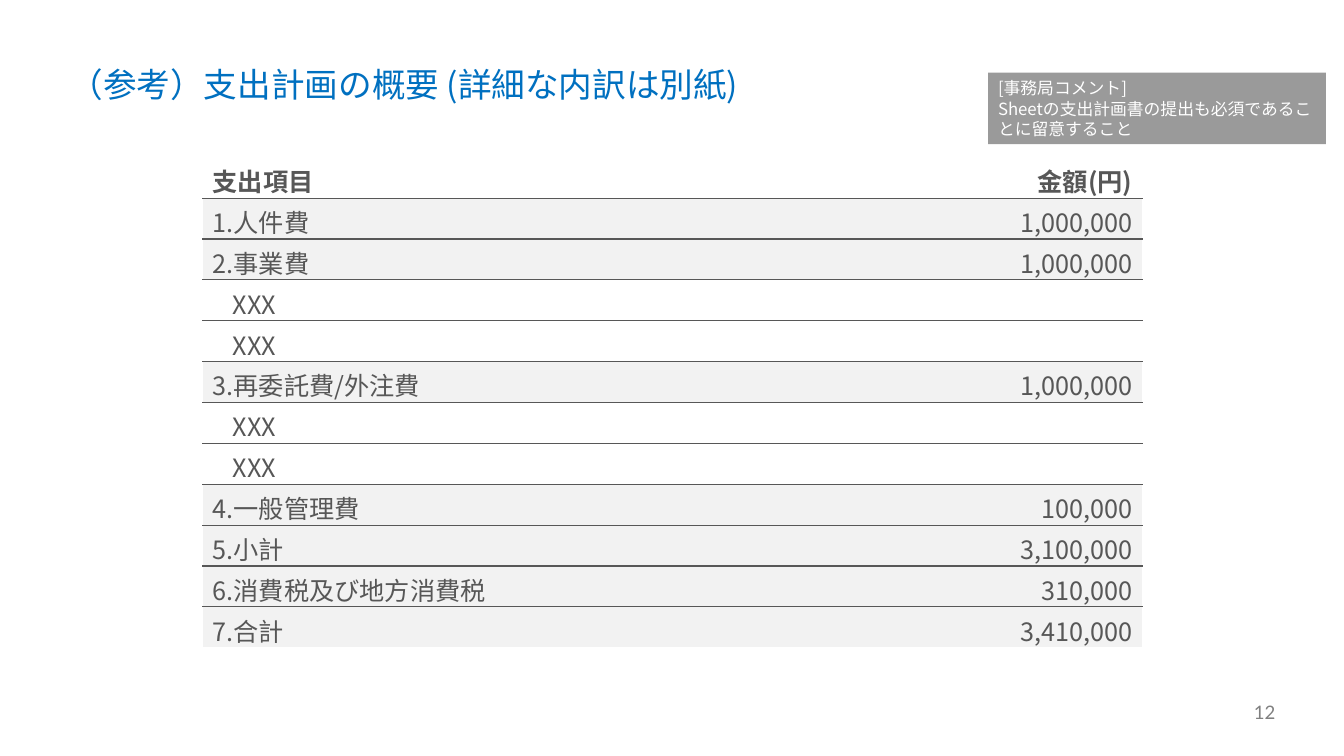
from dataclasses import dataclass

from lxml.etree import SubElement as Sub
from pptx import Presentation
from pptx.dml.color import RGBColor as RGB
from pptx.enum.shapes import MSO_SHAPE as Shape
from pptx.enum.text import MSO_ANCHOR as Anchor, PP_ALIGN as Align
from pptx.oxml.ns import qn
from pptx.util import Inches, Pt

HUES = {"blue": "0070C0", "text": "575757", "band": "F2F2F2",
        "note": "9A9A9A", "page": "808080", "white": "FFFFFF"}
SANS = "Noto Sans CJK JP"
PAD = ("margin_left", "margin_top", "margin_right", "margin_bottom")


@dataclass
class Style:
    size: float
    hue: str
    face: str = SANS
    bold: bool = False
    align: Align = Align.LEFT
    space: float = 1.0


@dataclass
class Label:
    box: tuple[float, float, float, float]
    text: str
    style: Style
    anchor: Anchor
    pads: tuple[float, float, float, float] = (0, 0, 0, 0)
    fill: str | None = None


@dataclass
class Item:
    name: str
    price: str = ""
    head: bool = False


LABELS = [
    Label((12.09, 6.95, 0.56, 0.22), "12",
          Style(13.3, "page", "Lato", align=Align.RIGHT), Anchor.BOTTOM),
    Label((0.69, 0.68, 11.96, 0.36), "（参考）支出計画の概要 (詳細な内訳は別紙)",
          Style(24, "blue", space=0.9), Anchor.MIDDLE),
    Label((9.8, 0.72, 3.35, 0.71),
          "[事務局コメント]\vSheetの支出計画書の提出も必須であることに留意すること",
          Style(12, "white"), Anchor.MIDDLE,
          (0.1, 0.05, 0.1, 0.05), "note"),
]
ITEMS = [
    Item("支出項目", "金額(円)", head=True),
    Item("1.人件費", "1,000,000"),
    Item("2.事業費", "1,000,000"),
    Item("XXX"),
    Item("XXX"),
    Item("3.再委託費/外注費", "1,000,000"),
    Item("XXX"),
    Item("XXX"),
    Item("4.一般管理費", "100,000"),
    Item("5.小計", "3,100,000"),
    Item("6.消費税及び地方消費税", "310,000"),
    Item("7.合計", "3,410,000"),
]


def tint(name: str) -> RGB:
    return RGB.from_string(HUES[name])


def write(frame, text: str, style: Style) -> None:
    frame.text = text
    para = frame.paragraphs[0]
    para.alignment = style.align
    para.line_spacing = style.space
    look = {"size": Pt(style.size), "bold": style.bold, "name": style.face}
    for run in para.runs:
        for key, value in look.items():
            setattr(run.font, key, value)
        run.font.color.rgb = tint(style.hue)
        Sub(run.font._element, qn("a:ea"), typeface=style.face)


def draw(slide, label: Label) -> None:
    box = [Inches(n) for n in label.box]
    if label.fill:
        shape = slide.shapes.add_shape(Shape.RECTANGLE, *box)
        shape.shadow.inherit = False
        shape.fill.solid()
        shape.fill.fore_color.rgb = tint(label.fill)
        shape.line.fill.background()
    else:
        shape = slide.shapes.add_textbox(*box)
    frame = shape.text_frame
    look = {"word_wrap": True, "vertical_anchor": label.anchor}
    look |= {side: Inches(n) for side, n in zip(PAD, label.pads)}
    for key, value in look.items():
        setattr(frame, key, value)
    write(frame, label.text, label.style)


def edge(cell, side: str, hue: str | None) -> None:
    line = Sub(cell._tc.get_or_add_tcPr(), qn(f"a:ln{side}"), w=str(Pt(1)))
    if hue:
        Sub(Sub(line, qn("a:solidFill")), qn("a:srgbClr"), val=HUES[hue])
    else:
        Sub(line, qn("a:noFill"))


def fill_cell(cell, item: Item, row: int, col: int) -> None:
    for side, value in zip(PAD, (0.1, 0.05, 0.1, 0)):
        setattr(cell, side, Inches(value))
    # Borders: white outside, grey between rows
    edge(cell, "L", None if col else "white")
    edge(cell, "R", "white" if col else None)
    edge(cell, "T", "text" if row else "white")
    edge(cell, "B", "text" if row < len(ITEMS) - 1 else "white")
    if item.price and not item.head:
        cell.fill.solid()
        cell.fill.fore_color.rgb = tint("band")
    else:
        cell.fill.background()
    align = Align.RIGHT if col else Align.LEFT
    text = item.price if col else item.name
    write(cell.text_frame, text, Style(18, "text", bold=item.head, align=align))
    if not item.price and not col:
        props = cell.text_frame.paragraphs[0]._p.get_or_add_pPr()
        props.set("marL", str(Inches(0.2)))
        props.set("indent", "0")


def build_table(slide) -> None:
    box = [Inches(n) for n in (2.01, 1.56, 9.32, 4.87)]
    table = slide.shapes.add_table(len(ITEMS), 2, *box).table
    for flag in ("first_row", "horz_banding"):
        setattr(table, flag, False)
    for col, width in zip(table.columns, (3.91, 5.41)):
        col.width = Inches(width)
    for row, item in enumerate(ITEMS):
        table.rows[row].height = box[3] // len(ITEMS)
        for col in range(2):
            fill_cell(table.cell(row, col), item, row, col)


def main() -> None:
    deck = Presentation()
    deck.slide_width, deck.slide_height = Inches(13.33), Inches(7.5)
    slide = deck.slides.add_slide(deck.slide_layouts[6])
    # Page number, title and comment
    for label in LABELS:
        draw(slide, label)
    # Spending plan
    build_table(slide)
    deck.save("out.pptx")


if __name__ == "__main__":
    main()
